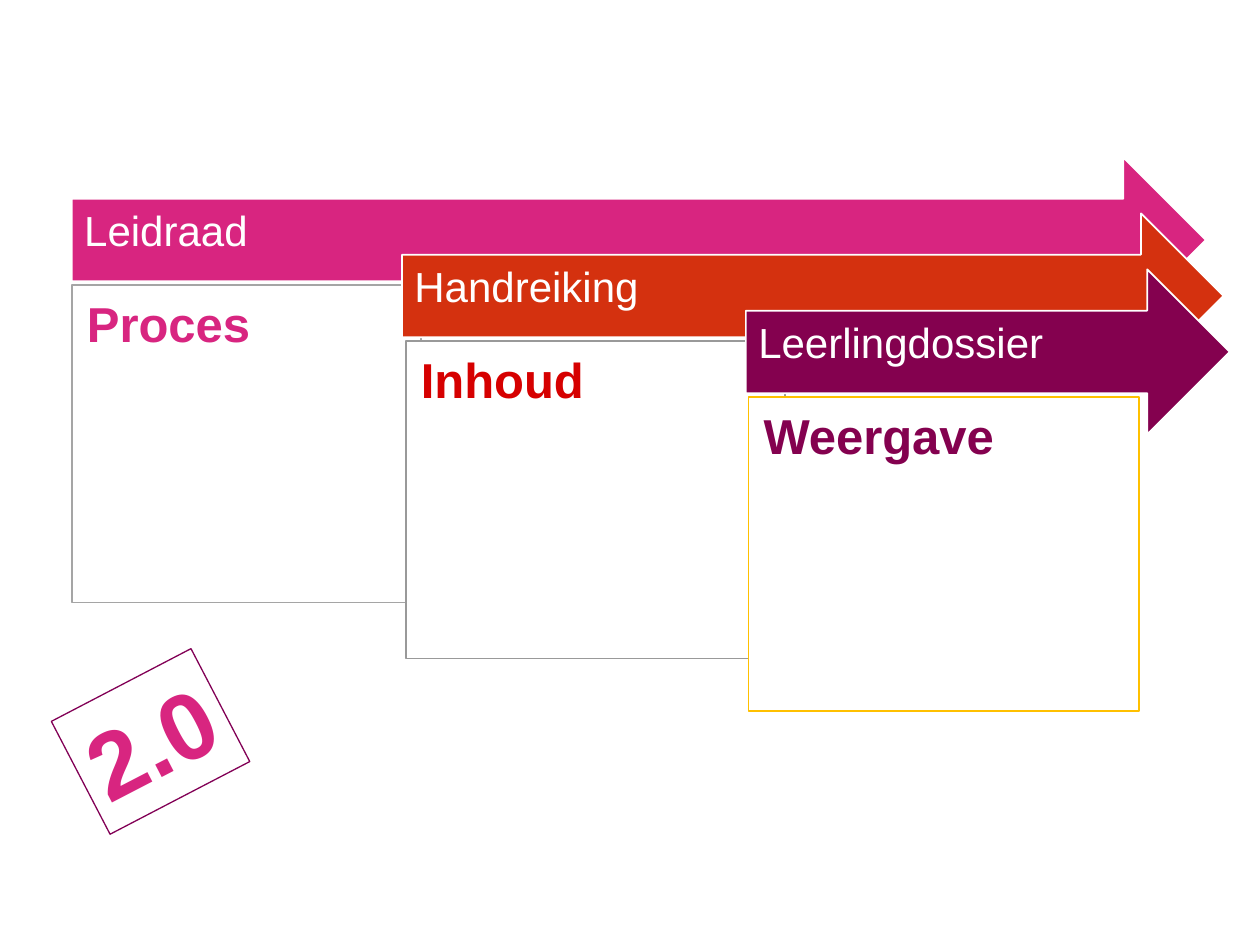
from pptx import Presentation
from pptx.dml.color import RGBColor
from pptx.enum.shapes import MSO_SHAPE
from pptx.enum.text import MSO_ANCHOR, PP_ALIGN
from pptx.util import Inches, Pt

SLIDE_WIDTH, SLIDE_HEIGHT = Inches(10), Inches(7.5)
FIRST_TOP, TOP_STEP = 16.67, 5.92
ARROW_HEIGHT, PANEL_OFFSET = 17.47, 13.5
ARROW_INSETS = (0.1, 0.1, 0.28, 0.21)
PANEL_INSETS = (0.12, 0.12, 0.12, 0.12)

STAGES = [
    {
        "arrow": ("Leidraad", 5.7, 90, "D82580"),
        "panel": ("Proces", 5.7, 27.7, 33.6, "A5A5A5", "D82580"),
    },
    {
        "arrow": ("Handreiking", 31.9, 65.2, "D4310F"),
        "panel": ("Inhoud", 32.2, 30.1, 33.6, "999999", "D60000"),
    },
    {
        "arrow": ("Leerlingdossier", 59.2, 38.4, "84014F"),
        "panel": ("Weergave", 59.4, 31, 33.2, "FFC000", "84014F"),
    },
]


def color(hex_code):
    """Turn a hex string into a colour."""
    return RGBColor.from_string(hex_code)


def add_block(slide, kind, left, top, width, height, fill, line, line_width=1):
    """Add a preset shape placed in percentages of the slide's size."""
    shape = slide.shapes.add_shape(
        kind,
        round(SLIDE_WIDTH * left / 100),
        round(SLIDE_HEIGHT * top / 100),
        round(SLIDE_WIDTH * width / 100),
        round(SLIDE_HEIGHT * height / 100),
    )
    shape.shadow.inherit = False
    if fill:
        shape.fill.solid()
        shape.fill.fore_color.rgb = color(fill)
    else:
        shape.fill.background()
    shape.line.color.rgb = color(line)
    shape.line.width = Pt(line_width)
    return shape


def write_text(shape, text, size, hex_code, bold=False, align=PP_ALIGN.LEFT,
               anchor=MSO_ANCHOR.TOP, insets=(0.1, 0.05, 0.1, 0.05),
               spacing=0.9, wrap=True):
    """Write one formatted paragraph into a shape."""
    frame = shape.text_frame
    frame.word_wrap = wrap
    frame.vertical_anchor = anchor
    (frame.margin_left, frame.margin_top,
     frame.margin_right, frame.margin_bottom) = map(Inches, insets)
    paragraph = frame.paragraphs[0]
    paragraph.alignment = align
    paragraph.line_spacing = spacing
    run = paragraph.add_run()
    run.text = text
    run.font.name = "Arial"
    run.font.size = Pt(size)
    run.font.bold = bold
    run.font.color.rgb = color(hex_code)


def add_arrow(slide, top, label, left, width, fill):
    """Add a labelled arrow that heads a stage."""
    arrow = add_block(slide, MSO_SHAPE.RIGHT_ARROW, left, top, width,
                      ARROW_HEIGHT, fill, "FFFFFF")
    write_text(arrow, label, 24, "FFFFFF", anchor=MSO_ANCHOR.MIDDLE,
               insets=ARROW_INSETS)


def add_panel(slide, top, label, left, width, height, line, text_color):
    """Add the white panel below a stage's arrow."""
    panel = add_block(slide, MSO_SHAPE.RECTANGLE, left, top, width, height,
                      "FFFFFF", line)
    write_text(panel, label, 28, text_color, bold=True, insets=PANEL_INSETS)


def add_version_stamp(slide):
    """Add the tilted version number."""
    stamp = add_block(slide, MSO_SHAPE.RECTANGLE, 5.7, 71.73, 12.5, 13.47,
                      None, "820056", 0.75)
    stamp.rotation = 332.5
    write_text(stamp, "2.0", 54, "D82580", bold=True, align=PP_ALIGN.CENTER,
               spacing=1.0, wrap=False)


def main():
    """Build and save the slide."""
    presentation = Presentation()
    presentation.slide_width = SLIDE_WIDTH
    presentation.slide_height = SLIDE_HEIGHT
    slide = presentation.slides.add_slide(presentation.slide_layouts[6])
    for index, stage in enumerate(STAGES):
        top = FIRST_TOP + index * TOP_STEP
        add_arrow(slide, top, *stage["arrow"])
        add_panel(slide, top + PANEL_OFFSET, *stage["panel"])
    add_version_stamp(slide)
    presentation.save("out.pptx")


if __name__ == "__main__":
    main()
